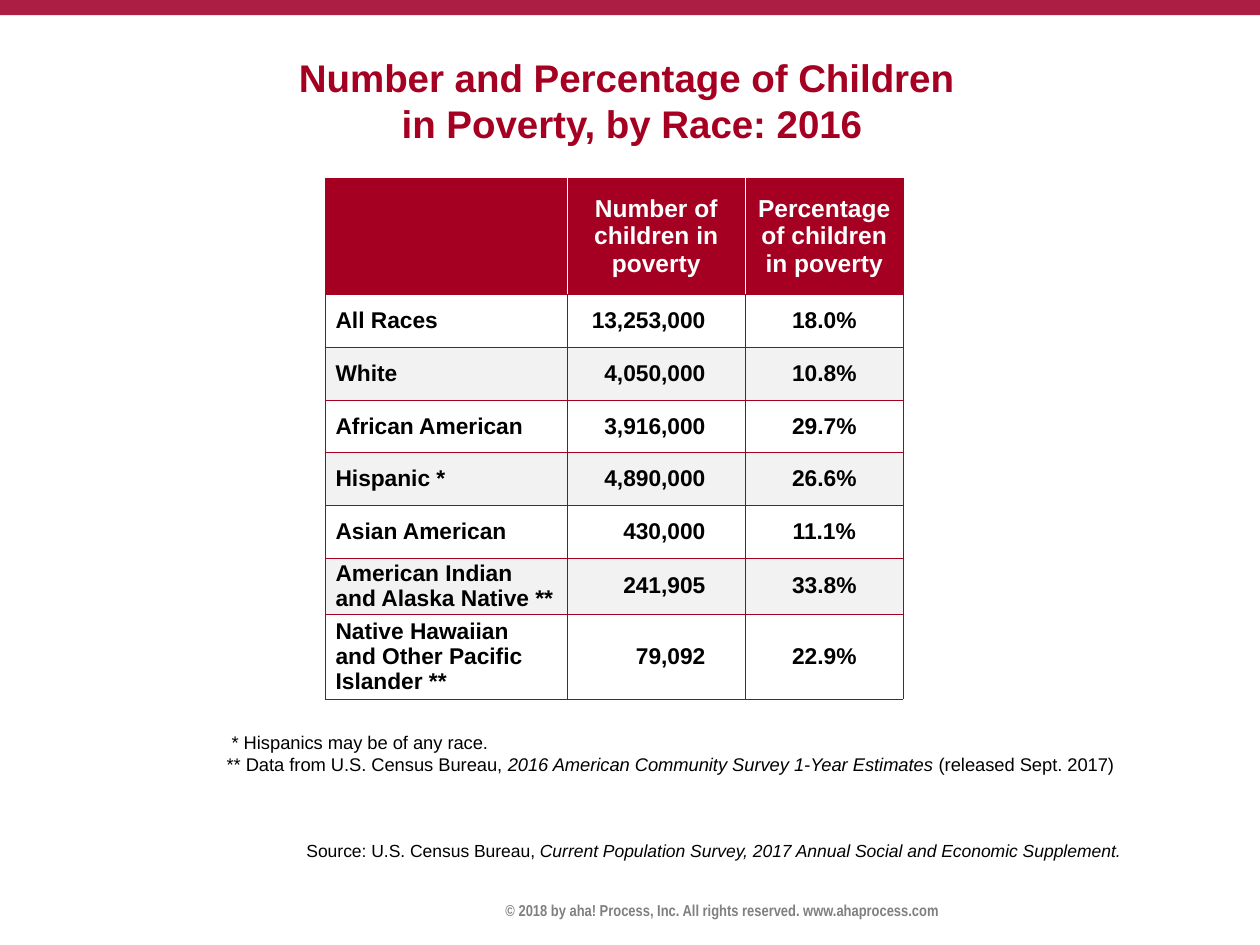
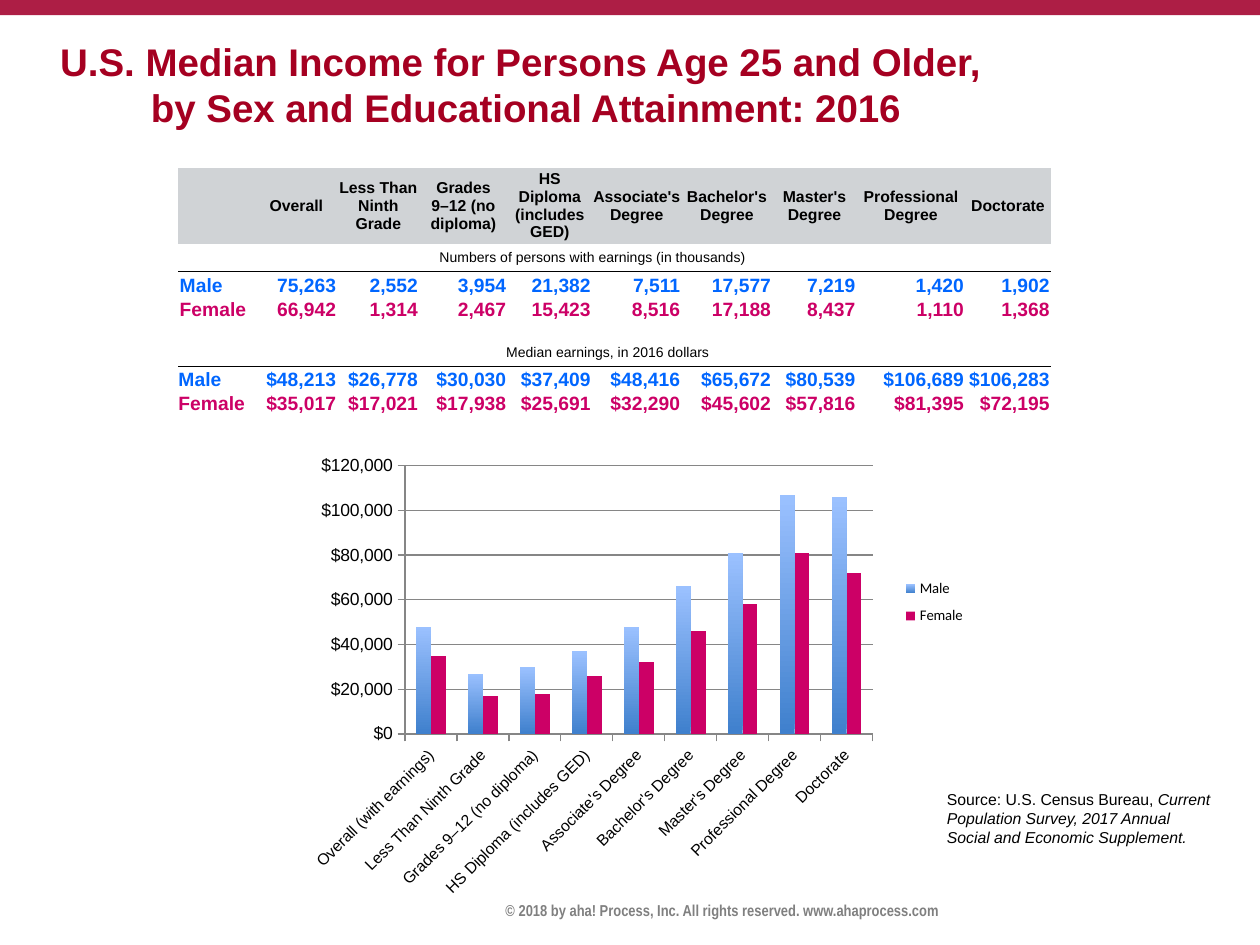
"""Two slides on poverty and income in the United States."""
from lxml import etree
from pptx import Presentation
from pptx import util as u
from pptx.chart import data as cd
from pptx.dml.color import RGBColor
from pptx.enum import chart as ce, shapes, text
from pptx.oxml.ns import qn

COLORS = {"band": "AD1E45", "title": "A50021", "footer": "808080", "ink": "000000",
          "paper": "FFFFFF", "stripe": "F2F2F2", "head": "D0D3D6",
          "male": "0066FF", "female": "CC0066", "bar_low": "3F80CD",
          "bar_high": "9BC1FF", "grid": "868686"}
UNIT = u.Inches(10) // 120
NO_STYLE = "{2D5ABB26-0587-4C30-8999-92F81FD0307C}"
LEFT, CENTER, RIGHT = text.PP_ALIGN.LEFT, text.PP_ALIGN.CENTER, text.PP_ALIGN.RIGHT
TOP, MIDDLE, BOTTOM = text.MSO_ANCHOR.TOP, text.MSO_ANCHOR.MIDDLE, text.MSO_ANCHOR.BOTTOM

POVERTY_HEAD = ["", "Number of children in poverty", "Percentage of children in poverty"]
POVERTY = [
    (["All Races"], "13,253,000", "18.0%"),
    (["White"], "4,050,000", "10.8%"),
    (["African American"], "3,916,000", "29.7%"),
    (["Hispanic *"], "4,890,000", "26.6%"),
    (["Asian American"], "430,000", "11.1%"),
    (["American Indian", "and Alaska Native **"], "241,905", "33.8%"),
    (["Native Hawaiian", "and Other Pacific Islander **"], "79,092", "22.9%"),
]

LEVELS = ["Overall", "Less Than Ninth Grade", "Grades 9–12 (no diploma)",
          "HS Diploma (includes GED)", "Associate's Degree", "Bachelor's Degree",
          "Master's Degree", "Professional Degree", "Doctorate"]
EARNERS = {
    "Male": [75263, 2552, 3954, 21382, 7511, 17577, 7219, 1420, 1902],
    "Female": [66942, 1314, 2467, 15423, 8516, 17188, 8437, 1110, 1368],
}
EARNINGS = {
    "Male": [48213, 26778, 30030, 37409, 48416, 65672, 80539, 106689, 106283],
    "Female": [35017, 17021, 17938, 25691, 32290, 45602, 57816, 81395, 72195],
}
SURVEY = "Current Population Survey, 2017 Annual Social and Economic Supplement."
SOURCE = [("Source: U.S. Census Bureau, ", False), (SURVEY, True)]


def rgb(name):
    """Look up a named colour."""
    return RGBColor.from_string(COLORS[name])


def place(box):
    """Turn columns and rows of the 120 by 90 grid into lengths."""
    return [u.Emu(round(n * UNIT)) for n in box]


def style(font, size, color="ink", bold=False, italic=False, name="Arial"):
    """Set the look of a font."""
    font.name, font.size, font.bold, font.italic = name, u.Pt(size), bold, italic
    font.color.rgb = rgb(color)


def write(p, words, size, align=LEFT, **look):
    """Add one styled run to a paragraph."""
    p.alignment = align
    r = p.add_run()
    r.text = words
    style(r.font, size, **look)


def add_box(slide, box, anchor=TOP):
    """Add a wrapping text box and return its frame."""
    tf = slide.shapes.add_textbox(*place(box)).text_frame
    tf.word_wrap = True
    tf.vertical_anchor = anchor
    return tf


def add_frame(slide):
    """Add the top band and the copyright footer."""
    sp = slide.shapes.add_shape(shapes.MSO_SHAPE.RECTANGLE, *place((0, 0, 120, 1.45)))
    sp.shadow.inherit = False
    sp.fill.solid()
    sp.fill.fore_color.rgb = rgb("band")
    sp.line.fill.background()
    tf = add_box(slide, (26.3, 85.2, 84.9, 3))
    write(tf.paragraphs[0], "© 2018 by aha! Process, Inc. All rights reserved. www.ahaprocess.com",
          9, CENTER, color="footer", bold=True, name="Arial Narrow")


def add_title(slide, box, lines, anchor):
    """Add a title of centred lines."""
    tf = add_box(slide, box, anchor)
    for i, line in enumerate(lines):
        p = tf.add_paragraph() if i else tf.paragraphs[0]
        write(p, line, 22, CENTER, color="title", bold=True)


def add_note(slide, box, paragraphs, size):
    """Add notes; each is a left margin, a first-line indent in inches, and its runs."""
    tf = add_box(slide, box)
    for i, (margin, indent, runs) in enumerate(paragraphs):
        p = tf.add_paragraph() if i else tf.paragraphs[0]
        pPr = p._p.get_or_add_pPr()
        pPr.set("marL", str(u.Inches(margin)))
        pPr.set("indent", str(u.Inches(indent)))
        for words, italic in runs:
            write(p, words, size, italic=italic)


def add_grid(slide, box, widths, heights):
    """Add an unstyled table whose columns and rows share the box by weight."""
    x, y, w, h = place(box)
    table = slide.shapes.add_table(len(heights), len(widths), x, y, w, h).table
    table.first_row = table.horz_banding = False
    table._tbl.tblPr.find(qn("a:tableStyleId")).text = NO_STYLE
    for column, share in zip(table.columns, widths):
        column.width = u.Emu(round(w * share / sum(widths)))
    for row, share in zip(table.rows, heights):
        row.height = u.Emu(round(h * share / sum(heights)))
    return table


def dress(cell, borders=(), fill=None, anchor=MIDDLE, margins=(0, 0, 0, 0)):
    """Set borders (side, colour, width in LRTB order), fill, anchor and margins of a cell."""
    tcPr = cell._tc.get_or_add_tcPr()
    for side, color, width in borders:
        ln = etree.SubElement(tcPr, qn("a:ln" + side), w=str(u.Pt(width)))
        solid = etree.SubElement(ln, qn("a:solidFill"))
        etree.SubElement(solid, qn("a:srgbClr"), val=COLORS[color])
    if fill:
        cell.fill.solid()
        cell.fill.fore_color.rgb = rgb(fill)
    else:
        cell.fill.background()
    cell.vertical_anchor = anchor
    (cell.margin_left, cell.margin_top,
     cell.margin_right, cell.margin_bottom) = [u.Inches(m) for m in margins]
    cell.text_frame.paragraphs[0].font.size = u.Pt(6)


def add_poverty_table(slide, box):
    """Add the table of children in poverty by race."""
    table = add_grid(slide, box, [23, 17, 15], [11, 5, 5, 5, 5, 5, 5.35, 8.05])
    for c, words in enumerate(POVERTY_HEAD):
        cell = table.cell(0, c)
        edges = [("L", "paper" if c else "title", 0.25),
                 ("R", "paper" if c < 2 else "title", 0.25),
                 ("T", "title", 0.25), ("B", "title", 0.25)]
        dress(cell, edges, "title", margins=(0.08, 0, 0.08, 0))
        if words:
            write(cell.text_frame.paragraphs[0], words, 14, CENTER, color="paper", bold=True)
    edges = [(side, "title", 0.25) for side in "LRTB"]
    for r, (race, number, share) in enumerate(POVERTY, 1):
        columns = [(race, LEFT, 0.08), ([number], RIGHT, 0.32), ([share], CENTER, 0.08)]
        for c, (lines, align, right) in enumerate(columns):
            cell = table.cell(r, c)
            dress(cell, edges, None if r % 2 else "stripe", margins=(0.08, 0, right, 0))
            tf = cell.text_frame
            for i, line in enumerate(lines):
                p = tf.add_paragraph() if i else tf.paragraphs[0]
                write(p, line, 13, align, bold=True)


def add_income_table(slide, box):
    """Add the table of earners and median earnings by sex and education."""
    table = add_grid(slide, box, [61, 65, 65, 70, 67, 71, 72, 67, 86, 68],
                     [60, 22, 19, 19, 15, 21, 19, 19])
    for c, words in enumerate([""] + LEVELS):
        cell = table.cell(0, c)
        dress(cell, fill="head")
        if words:
            p = cell.text_frame.paragraphs[0]
            first, mark, rest = words.partition("Grades ")
            write(p, mark.strip() or first, 9, CENTER, bold=True)
            if rest:
                p.add_line_break()
                write(p, rest, 9, CENTER, bold=True)
    for c in range(10):
        dress(table.cell(4, c))
    blocks = [
        (1, "Numbers of persons with earnings (in thousands)", 5, 0.16, 0.5, 0.01, "{:,}", EARNERS),
        (5, "Median earnings, in 2016 dollars", 4, 0.69, 0.25, 0, "${:,}", EARNINGS)]
    for top, caption, span, indent, width, inset, form, people in blocks:
        for c in range(10):
            dress(table.cell(top, c), [("B", "ink", width)],
                  margins=(indent if c == 3 else 0, 0, 0, 0))
        cell = table.cell(top, 3)
        cell.merge(table.cell(top, 2 + span))
        write(cell.text_frame.paragraphs[0], caption, 8)
        for r, (sex, values) in enumerate(people.items(), top + 1):
            for c, words in enumerate([sex] + [form.format(v) for v in values]):
                cell = table.cell(r, c)
                dress(cell, anchor=BOTTOM, margins=(0.01 if c else inset, 0.01, 0.01, 0))
                write(cell.text_frame.paragraphs[0], words, 11, RIGHT if c else LEFT,
                      color=sex.lower(), bold=True)


def set_layout(parent, index, shares, inner=False):
    """Fix a chart part at shares of the chart's size."""
    for old in parent.findall(qn("c:layout")):
        parent.remove(old)
    layout = etree.Element(qn("c:layout"))
    manual = etree.SubElement(layout, qn("c:manualLayout"))
    if inner:
        etree.SubElement(manual, qn("c:layoutTarget"), val="inner")
    for tag in ("xMode", "yMode"):
        etree.SubElement(manual, qn("c:" + tag), val="edge")
    for tag, share in zip("xywh", shares):
        etree.SubElement(manual, qn("c:" + tag), val=str(share))
    parent.insert(index, layout)


def add_income_chart(slide, box):
    """Add the column chart of median earnings, to the nearest thousand."""
    data = cd.CategoryChartData(number_format=r"\$#,##0")
    data.categories = ["Overall (with earnings)"] + LEVELS[1:]
    for sex, values in EARNINGS.items():
        data.add_series(sex, [round(v, -3) for v in values])
    chart = slide.shapes.add_chart(ce.XL_CHART_TYPE.COLUMN_CLUSTERED, *place(box), data).chart
    style(chart.font, 10, name="Calibri")
    chart.has_title = False
    plot = chart.plots[0]
    plot.gap_width, plot.overlap, plot.vary_by_categories = 150, 0, False
    male, female = [s.format.fill for s in plot.series]
    male.gradient()
    male.gradient_angle = 90
    for stop, name in zip(male.gradient_stops, ("bar_low", "bar_high")):
        stop.color.rgb = rgb(name)
    female.solid()
    female.fore_color.rgb = rgb("female")
    for axis, size in ((chart.category_axis, 9), (chart.value_axis, 10)):
        style(axis.tick_labels.font, size)
        axis.major_tick_mark = ce.XL_TICK_MARK.OUTSIDE
        axis.format.line.color.rgb = rgb("grid")
    labels = chart.category_axis._element.find(qn("c:txPr"))
    labels.find(qn("a:bodyPr")).set("rot", str(-45 * 60000))
    value = chart.value_axis
    value.minimum_scale, value.maximum_scale, value.major_unit = 0, 120000, 20000
    value.tick_labels.number_format = r"\$#,##0"
    value.tick_labels.number_format_is_linked = False
    value.major_gridlines.format.line.color.rgb = rgb("grid")
    chart.has_legend = True
    legend = chart.legend
    legend.position = ce.XL_LEGEND_POSITION.RIGHT
    legend.include_in_layout = False
    style(legend.font, 8.4, name="Calibri")
    set_layout(legend._element, 1, (0.86, 0.28, 0.12, 0.13))
    set_layout(chart._chartSpace.chart.plotArea, 0, (0.15, 0.07, 0.68, 0.54), inner=True)


def build_poverty(slide):
    """Lay out the child poverty slide."""
    add_frame(slide)
    add_title(slide, (0.2, 3, 120, 13),
              ["Number and Percentage of Children ", "in Poverty, by Race: 2016"], MIDDLE)
    add_note(slide, (20.4, 69, 89, 5.4), [
        (0.04, 0, [("* Hispanics may be of any race.", False)]),
        (0.18, -0.18, [("** Data from U.S. Census Bureau, ", False),
                       ("2016 American Community Survey 1-Year Estimates ", True),
                       ("(released Sept. 2017)", False)])], 10.5)
    add_note(slide, (28, 79.4, 87, 3.2), [(0, 0, SOURCE)], 10)
    add_poverty_table(slide, (31, 17, 55, 49.6))


def build_income(slide):
    """Lay out the median income slide."""
    add_frame(slide)
    add_title(slide, (0.6, 3, 99, 12),
              ["U.S. Median Income for Persons Age 25 and Older, ",
               "by Sex and Educational Attainment: 2016"], TOP)
    add_note(slide, (89, 74.6, 28, 6.7), [(0, 0, SOURCE)], 9)
    add_income_table(slide, (17, 16, 83.1, 23.4))
    add_income_chart(slide, (28.75, 41.05, 65.5, 47.3))


def main():
    """Build and save the deck."""
    prs = Presentation()
    prs.slide_width, prs.slide_height = 120 * UNIT, 90 * UNIT
    for build in (build_poverty, build_income):
        build(prs.slides.add_slide(prs.slide_layouts[6]))
    prs.save("out.pptx")


if __name__ == "__main__":
    main()
